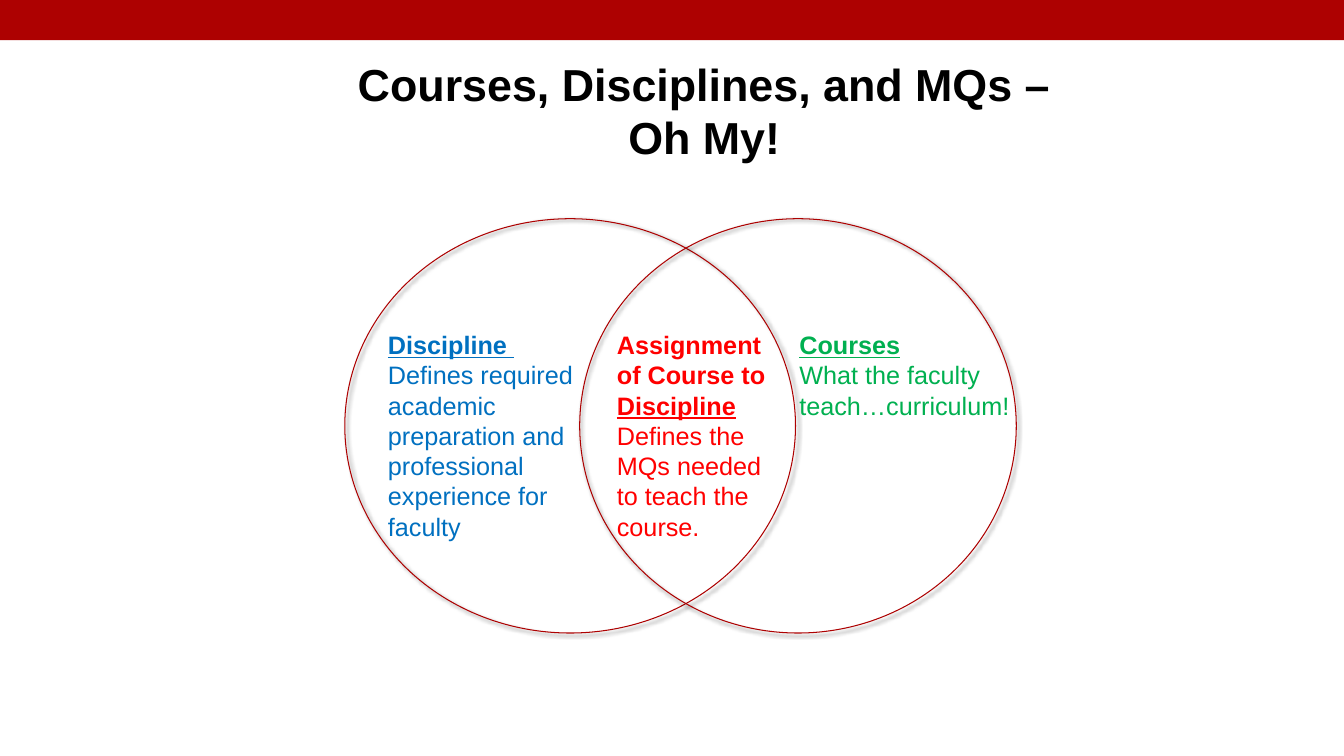
from lxml import etree
from pptx import Presentation
from pptx.dml.color import RGBColor
from pptx.enum.shapes import MSO_SHAPE
from pptx.enum.text import MSO_AUTO_SIZE, PP_ALIGN
from pptx.oxml import parse_xml
from pptx.oxml.ns import qn
from pptx.util import Inches, Pt

RECTANGLE, OVAL = MSO_SHAPE.RECTANGLE, MSO_SHAPE.OVAL
GROW = MSO_AUTO_SIZE.SHAPE_TO_FIT_TEXT
LEFT, CENTER = PP_ALIGN.LEFT, PP_ALIGN.CENTER
RED = "AD0101"
HEADING = {"bold": True, "underline": True}
STRONG = {"bold": True}
BODY = {}
SHADOW = """<a:effectLst xmlns:a="http://schemas.openxmlformats.org/drawingml/2006/main">
<a:outerShdw blurRad="38100" dist="25400" dir="2700000" algn="br" rotWithShape="0">
<a:srgbClr val="000000"><a:alpha val="60000"/></a:srgbClr>
</a:outerShdw></a:effectLst>"""


def color(value):
    return RGBColor.from_string(value)


def add_text(page, place, paragraphs, size, text_color, alignment=LEFT):
    box = page.shapes.add_textbox(*map(Inches, place))
    frame = box.text_frame
    frame.word_wrap = True
    frame.auto_size = GROW
    for index, spans in enumerate(paragraphs):
        para = frame.add_paragraph() if index else frame.paragraphs[0]
        para.alignment = alignment
        for text, extra in spans:
            span = para.add_run()
            span.text = text
            span.font.color.rgb = color(text_color)
            for name, value in {"name": "Arial", "size": Pt(size), **extra}.items():
                setattr(span.font, name, value)


deck = Presentation()
deck.slide_width, deck.slide_height = Inches(13.33), Inches(7.5)
page = deck.slides.add_slide(deck.slide_layouts[6])

banner = page.shapes.add_shape(RECTANGLE, 0, 0, deck.slide_width, Inches(0.4))
banner.shadow.inherit = False
banner.fill.solid()
banner.fill.fore_color.rgb = color(RED)
banner.line.fill.background()

for left, width in [(3.42, 4.47), (5.75, 4.33)]:
    circle = page.shapes.add_shape(OVAL, Inches(left), Inches(2.17), Inches(width), Inches(4.11))
    circle.fill.background()
    circle.line.color.rgb = color(RED)
    circle.line.width = Pt(0.75)
    circle.shadow.inherit = False
    properties = circle.fill._xPr
    properties.replace(properties.find(qn("a:effectLst")), parse_xml(etree.tostring(etree.fromstring(SHADOW))))

venn_texts = [
    (3.75, 2.27, 2.22, "0070C0", [
        [("Discipline", HEADING), (" ", {"underline": True})],
        [("Defines required academic preparation and professional experience for faculty", BODY)],
    ]),
    (7.83, 2.46, 1.01, "00B050", [
        [("Courses", HEADING)],
        [("What the faculty teach…curriculum!", BODY)],
    ]),
    (6.02, 1.81, 2.52, "FF0000", [
        [("Assignment of Course to ", STRONG), ("Discipline", HEADING),
         (" Defines the MQs needed to teach the course.", BODY)],
    ]),
]
for left, width, height, text_color, paragraphs in venn_texts:
    add_text(page, (left, 3.22, width, height), paragraphs, 18, text_color)

title = [[("Courses, Disciplines, and MQs – Oh My!", STRONG)]]
add_text(page, (3.14, 0.51, 7.69, 0.64), title, 32, "000000", CENTER)

deck.save("out.pptx")
